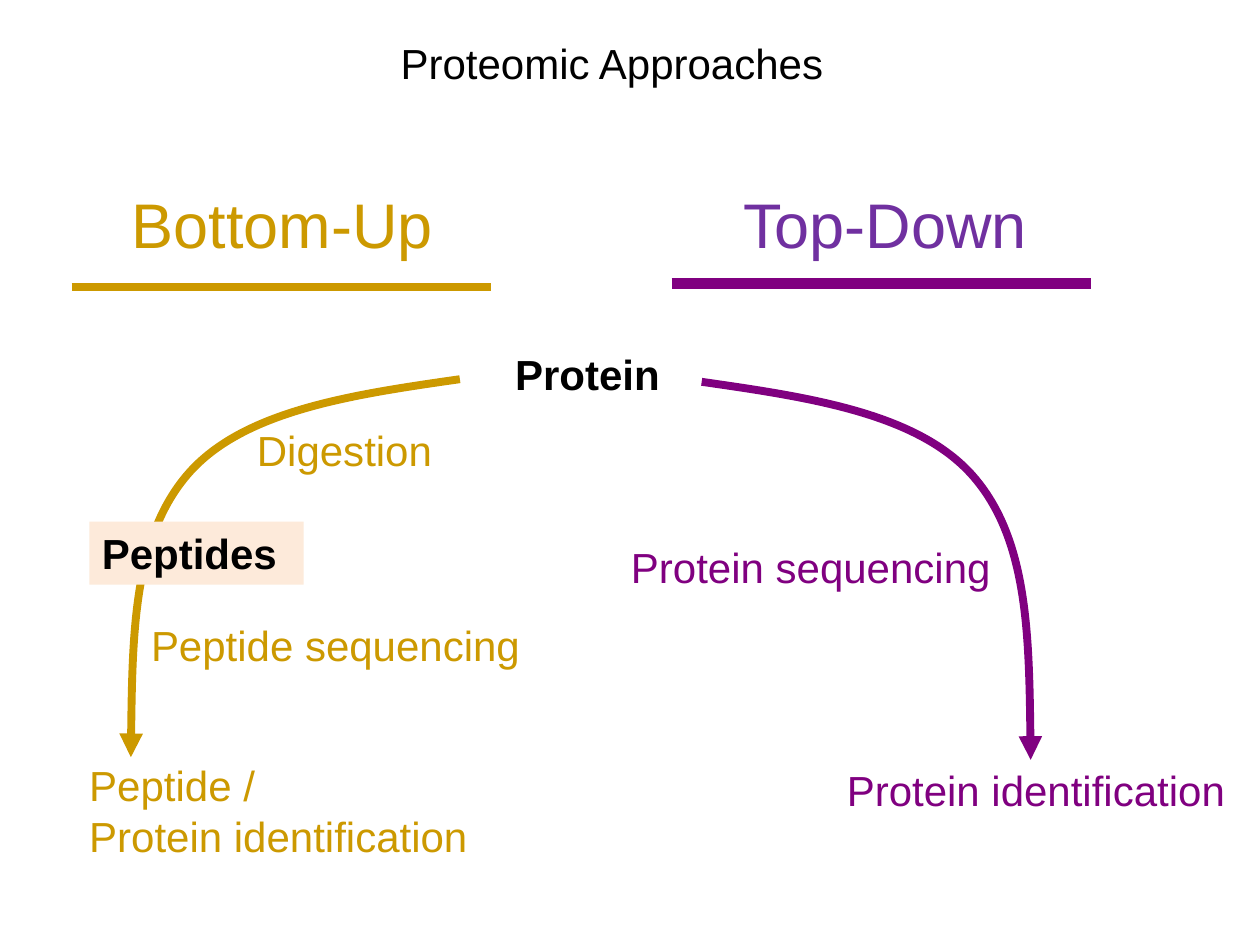
from lxml import etree
from pptx import Presentation
from pptx.dml.color import RGBColor
from pptx.enum.shapes import MSO_CONNECTOR, MSO_SHAPE
from pptx.enum.text import MSO_ANCHOR, PP_ALIGN
from pptx.oxml.ns import qn
from pptx.util import Pt

STRAIGHT = MSO_CONNECTOR.STRAIGHT
RECTANGLE = MSO_SHAPE.RECTANGLE
LEFT, TOP = PP_ALIGN.LEFT, MSO_ANCHOR.TOP

GOLD, PURPLE, VIOLET = "CC9900", "800080", "7030A0"
BLACK, PEACH = "000000", "FDEADA"

RULES = [
    (41, 164.2, 239.6, GOLD, 4.5),
    (383.8, 162, 239.6, PURPLE, 6),
]
ARROWS = [
    (262.8, 216.7, -1, GOLD),
    (401, 218.2, 1, PURPLE),
]
BEND = [
    [(62, 8.9), (123.8, 18), (155.2, 54)],
    [(186.5, 90), (187.3, 152.6), (188, 216)],
]
LABELS = [
    (["Proteomic Approaches"], 221.8, 18, 306, 24, BLACK, False, 0),
    (["Bottom-Up"], 48.2, 102.2, 221.8, 36, GOLD, False, 20),
    (["Top-Down"], 317.5, 102.2, 300.2, 36, VIOLET, False, 100),
    (["Protein"], 287.3, 195.8, 105.8, 24, BLACK, True, 0),
    (["Digestion"], 139.7, 239, 116.6, 24, GOLD, False, 0),
    (["Peptides"], 51.1, 298.1, 122.4, 24, BLACK, True, 0),
    (["Peptide sequencing"], 79.2, 350.6, 229, 24, GOLD, False, 0),
    (["Peptide /", "Protein identification"], 43.9, 430.6, 234, 24, GOLD, False, 0),
    (["Protein sequencing"], 353.5, 306, 223.2, 24, PURPLE, False, 0),
    (["Protein identification"], 443.5, 433.4, 266, 24, PURPLE, False, 33.3),
]
FILLS = {"Peptides": PEACH}
HEIGHTS = {(24, 1): 36, (24, 2): 65.5, (36, 1): 51}


def color(value):
    return RGBColor.from_string(value)


def style_line(line, value, width):
    line.color.rgb = color(value)
    line.width = Pt(width)


def add_rule(page, left, top, width, value, weight):
    rule = page.shapes.add_connector(
        STRAIGHT, Pt(left), Pt(top), Pt(left + width), Pt(top))
    style_line(rule.line, value, weight)
    etree.SubElement(rule._element.spPr, qn("a:effectLst"))


def add_arrow(page, left, top, direction, value):
    curves = [[(Pt(left + direction * across), Pt(top + down))
               for across, down in curve] for curve in BEND]
    builder = page.shapes.build_freeform(Pt(left), Pt(top))
    builder.add_line_segments([curve[-1] for curve in curves], close=False)
    arrow = builder.convert_to_shape()
    arrow.shadow.inherit = False
    arrow.fill.background()
    style_line(arrow.line, value, 4.5)
    etree.SubElement(arrow.line._get_or_add_ln(), qn("a:tailEnd"), type="triangle")
    segments = list(arrow._element.iter(qn("a:lnTo")))
    for segment, curve in zip(segments, curves):
        bezier = etree.Element(qn("a:cubicBezTo"))
        for across, down in curve:
            etree.SubElement(bezier, qn("a:pt"),
                             x=str(across - arrow.left), y=str(down - arrow.top))
        segment.getparent().replace(segment, bezier)


def add_label(page, lines, left, top, width, size, value, bold, indent):
    place = Pt(left), Pt(top), Pt(width), Pt(HEIGHTS[size, len(lines)])
    fill = FILLS.get(lines[0])
    if fill:
        box = page.shapes.add_shape(RECTANGLE, *place)
        box.shadow.inherit = False
        box.fill.solid()
        box.fill.fore_color.rgb = color(fill)
        box.line.fill.background()
    else:
        box = page.shapes.add_textbox(*place)
    frame = box.text_frame
    frame.word_wrap = True
    frame.vertical_anchor = TOP
    frame.text = "\n".join(lines)
    for para in frame.paragraphs:
        para.alignment = LEFT
        para.font.name = "Arial"
        para.font.size = Pt(size)
        para.font.bold = bold
        para.font.color.rgb = color(value)
        if indent:
            para._p.get_or_add_pPr().set("marL", str(Pt(indent)))


def main():
    deck = Presentation()
    deck.slide_width, deck.slide_height = Pt(720), Pt(540)
    page = deck.slides.add_slide(deck.slide_layouts[6])
    for rule in RULES:
        add_rule(page, *rule)
    for arrow in ARROWS:
        add_arrow(page, *arrow)
    for label in LABELS:
        add_label(page, *label)
    deck.save("out.pptx")


if __name__ == "__main__":
    main()
